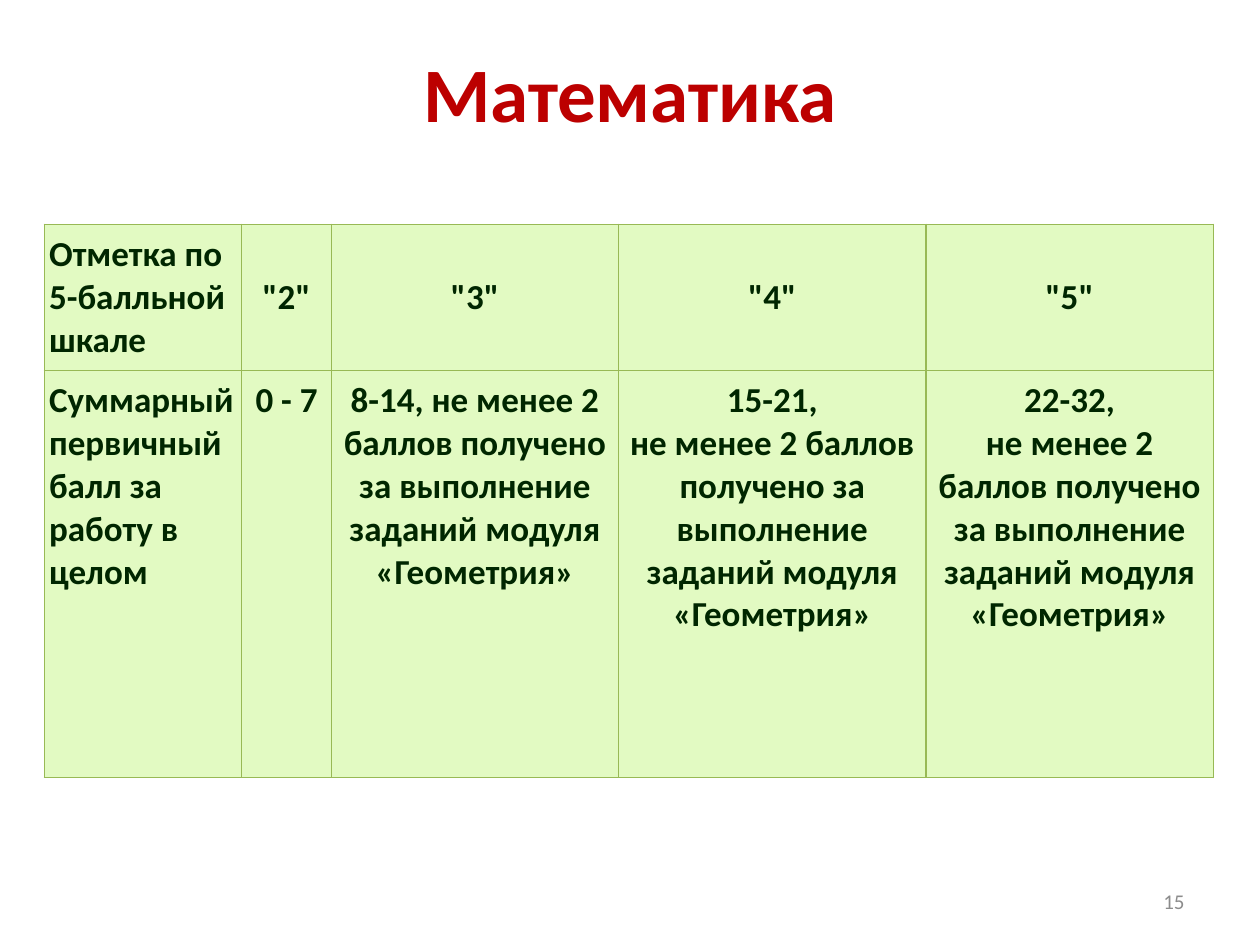
from dataclasses import dataclass

from pptx import Presentation
from pptx.dml.color import RGBColor
from pptx.enum.text import MSO_ANCHOR as Anchor, PP_ALIGN as Align
from pptx.oxml import parse_xml
from pptx.oxml.ns import nsdecls
from pptx.util import Inches, Pt


@dataclass(frozen=True)
class Theme:
    """Colours, typeface and type sizes of the slide."""
    font: str = "Calibri"
    title: str = "BC0000"
    body: str = "002600"
    number: str = "8C8C8C"
    cell: str = "E2FAC2"
    border: str = "98B955"
    title_size: int = 44
    body_size: int = 20
    number_size: int = 12
    border_width: float = 0.75


THEME = Theme()
GEOMETRY = "не менее 2 баллов получено за выполнение заданий модуля «Геометрия»"
GRADES = [
    ["Отметка по 5-балльной шкале", '"2"', '"3"', '"4"', '"5"'],
    ["Суммарный первичный балл за работу в целом", "0 - 7",
     f"8-14, {GEOMETRY}", f"15-21,\n{GEOMETRY}", f"22-32,\n{GEOMETRY}"],
]
COLUMN_WIDTHS = [1.57, 0.71, 2.28, 2.44, 2.28]
ROW_HEIGHTS = [1.16, 3.23]


def write_text(frame, text, size, color, align, bold=False):
    """Fill a text frame and format every run alike."""
    frame.text = text
    for para in frame.paragraphs:
        para.alignment = align
        for span in para.runs:
            span.font.name = THEME.font
            span.font.size = Pt(size)
            span.font.bold = bold
            span.font.color.rgb = RGBColor.from_string(color)


def place(shape, left, top, width, height):
    """Set the position and size of a shape in inches."""
    shape.left, shape.top = Inches(left), Inches(top)
    shape.width, shape.height = Inches(width), Inches(height)


def add_title(page, text):
    """Move and format the title placeholder."""
    title = page.shapes.title
    place(title, 0.5, 0.3, 9, 0.85)
    title.text_frame.vertical_anchor = Anchor.MIDDLE
    write_text(title.text_frame, text, THEME.title_size, THEME.title, Align.CENTER, True)


def add_page_number(page, text):
    """Add the page number at the lower right."""
    box = page.shapes.add_textbox(Inches(7.17), Inches(6.95), Inches(2.33), Inches(0.4))
    box.text_frame.word_wrap = True
    box.text_frame.vertical_anchor = Anchor.MIDDLE
    write_text(box.text_frame, text, THEME.number_size, THEME.number, Align.RIGHT)


def add_borders(cell):
    """Draw a thin line on all four sides of a cell."""
    properties = cell._tc.get_or_add_tcPr()
    for side in ("lnL", "lnR", "lnT", "lnB"):
        properties.append(parse_xml(
            f'<a:{side} {nsdecls("a")} w="{Pt(THEME.border_width)}"><a:solidFill>'
            f'<a:srgbClr val="{THEME.border}"/></a:solidFill></a:{side}>'))


def style_cell(cell, text, align, anchor):
    """Write a cell and give it margins, borders and fill."""
    cell.margin_left = cell.margin_right = Inches(0.04)
    cell.margin_top = cell.margin_bottom = Inches(0.07)
    cell.vertical_anchor = anchor
    add_borders(cell)
    cell.fill.solid()
    cell.fill.fore_color.rgb = RGBColor.from_string(THEME.cell)
    write_text(cell.text_frame, text, THEME.body_size, THEME.body, align, True)


def add_grade_table(page):
    """Add the table of grades and scores."""
    table = page.shapes.add_table(
        len(ROW_HEIGHTS), len(COLUMN_WIDTHS), Inches(0.35), Inches(1.78),
        Inches(sum(COLUMN_WIDTHS)), Inches(sum(ROW_HEIGHTS))).table
    for column, width in zip(table.columns, COLUMN_WIDTHS):
        column.width = Inches(width)
    for row, height in zip(table.rows, ROW_HEIGHTS):
        row.height = Inches(height)
    for row_index, texts in enumerate(GRADES):
        for column_index, text in enumerate(texts):
            align = Align.CENTER if column_index else Align.LEFT
            header_anchor = Anchor.MIDDLE if column_index else Anchor.BOTTOM
            anchor = Anchor.TOP if row_index else header_anchor
            style_cell(table.cell(row_index, column_index), text, align, anchor)


def main():
    """Build and save the slide."""
    deck = Presentation()
    deck.slide_width, deck.slide_height = Inches(10), Inches(7.5)
    page = deck.slides.add_slide(deck.slide_layouts.get_by_name("Title Only"))
    add_title(page, "Математика")
    add_page_number(page, "15")
    add_grade_table(page)
    deck.save("out.pptx")


if __name__ == "__main__":
    main()
